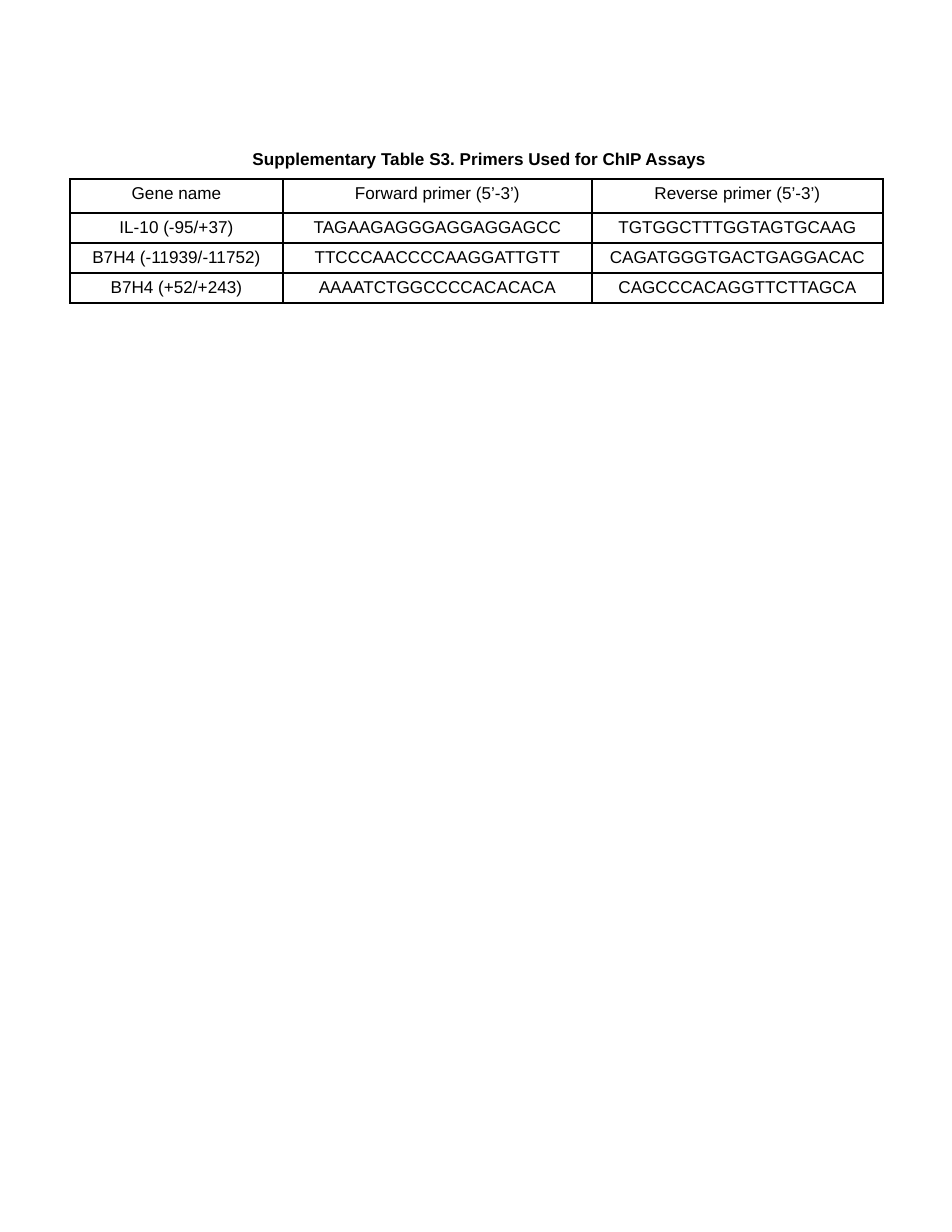
from typing import NamedTuple

from lxml.etree import SubElement
from pptx import Presentation
from pptx.dml.color import RGBColor
from pptx.enum.text import MSO_ANCHOR as Anchor, MSO_AUTO_SIZE as AutoSize, PP_ALIGN as Align
from pptx.oxml.ns import qn
from pptx.util import Emu, Pt

PX = 914400 / 112
BLACK = RGBColor(0x00, 0x00, 0x00)
WHITE = RGBColor(0xFF, 0xFF, 0xFF)
FONT = "Arial"
INSET = 5
HEADER_HEIGHT, ROW_HEIGHT = 34, 30
COLUMN_WIDTHS = (213, 309, 291)


class Primer(NamedTuple):
    gene: str
    forward: str
    reverse: str


HEADER = Primer("Gene name", "Forward primer (5’-3’)", "Reverse primer (5’-3’)")
PRIMERS = (
    Primer("IL-10 (-95/+37)", "TAGAAGAGGGAGGAGGAGCC", "TGTGGCTTTGGTAGTGCAAG"),
    Primer("B7H4 (-11939/-11752)", "TTCCCAACCCCAAGGATTGTT", "CAGATGGGTGACTGAGGACAC"),
    Primer("B7H4 (+52/+243)", "AAAATCTGGCCCCACACACA", "CAGCCCACAGGTTCTTAGCA"),
)


def px(length: int) -> Emu:
    return Emu(round(length * PX))


def write(frame, text: str, *, size: int = 11, bold: bool = False,
          color: RGBColor = BLACK, align: Align = Align.CENTER) -> None:
    para = frame.paragraphs[0]
    para.alignment = align
    span = para.add_run()
    span.text = text
    font = span.font
    font.name, font.size, font.bold = FONT, Pt(size), bold
    font.color.rgb = color


def add_borders(cell, width: int = 1, color: RGBColor = BLACK) -> None:
    """Outline all four sides; lines must precede the fill in the cell's XML."""
    properties = cell._tc.get_or_add_tcPr()
    for side in ("lnL", "lnR", "lnT", "lnB"):
        line = SubElement(properties, qn(f"a:{side}"), w=str(Pt(width)))
        fill = SubElement(line, qn("a:solidFill"))
        SubElement(fill, qn("a:srgbClr"), val=str(color))


def add_title(slide, text: str) -> None:
    title = slide.shapes.title
    title.left, title.top, title.width, title.height = map(px, (237, 142, 485, 33))
    frame = title.text_frame
    frame.word_wrap = True
    frame.auto_size = AutoSize.NONE
    frame.vertical_anchor = Anchor.MIDDLE
    write(frame, text, bold=True)


def add_primer_table(slide, left: int, top: int) -> None:
    rows = (HEADER, *PRIMERS)
    heights = (HEADER_HEIGHT, *[ROW_HEIGHT] * len(PRIMERS))
    table = slide.shapes.add_table(
        len(rows), len(COLUMN_WIDTHS), px(left), px(top),
        px(sum(COLUMN_WIDTHS)), px(sum(heights))).table
    table.first_row = table.horz_banding = False
    for column, width in zip(table.columns, COLUMN_WIDTHS):
        column.width = px(width)
    for row, height, primer in zip(table.rows, heights, rows):
        row.height = px(height)
        for cell, text in zip(row.cells, primer):
            cell.margin_top = cell.margin_bottom = px(INSET)
            cell.vertical_anchor = Anchor.TOP
            add_borders(cell)
            cell.fill.solid()
            cell.fill.fore_color.rgb = WHITE
            write(cell.text_frame, text)


def main() -> None:
    deck = Presentation()
    deck.slide_width, deck.slide_height = px(952), px(1232)
    page = deck.slides.add_slide(deck.slide_layouts[5])
    add_primer_table(page, 70, 179)
    add_title(page, "Supplementary Table S3. Primers Used for ChIP Assays")
    deck.save("out.pptx")


if __name__ == "__main__":
    main()
